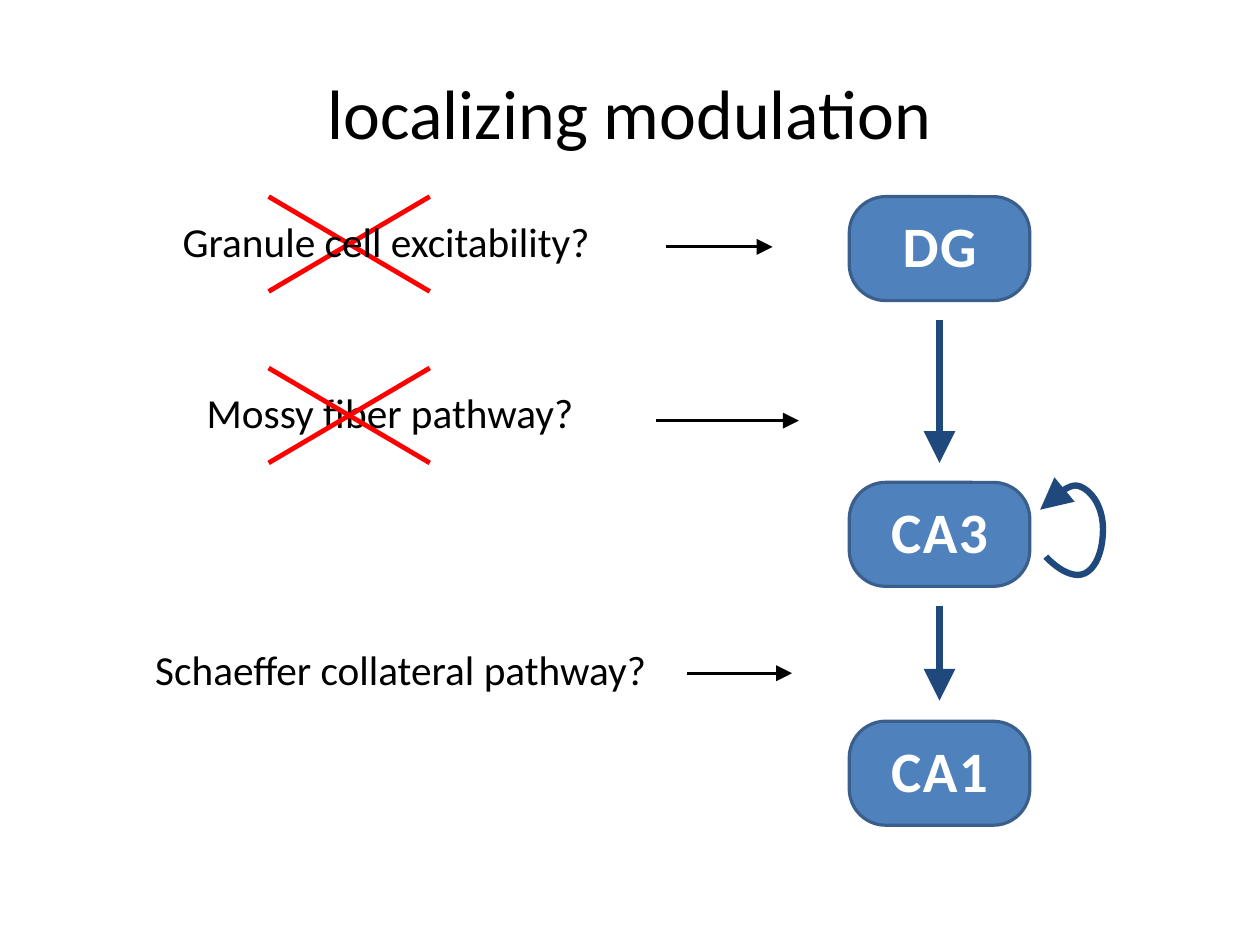
from pptx import Presentation
from pptx import util as u
from pptx.dml.color import RGBColor
from pptx.enum import shapes, text
from lxml import etree

theme = {
    "font": "Calibri",
    "black": RGBColor(0, 0, 0),
    "white": RGBColor(255, 255, 255),
    "red": RGBColor(255, 0, 0),
    "blue": RGBColor(0x4F, 0x81, 0xBD),
    "edge": RGBColor(0x3A, 0x5F, 0x8C),
    "navy": RGBColor(0x1F, 0x49, 0x7D),
    "title": 44, "label": 26, "box": 36,
}
ns = "{http://schemas.openxmlformats.org/drawingml/2006/main}"

deck = Presentation()
deck.slide_width, deck.slide_height = u.Inches(28 / 2.54), u.Inches(21 / 2.54)
slide = deck.slides.add_slide(deck.slide_layouts[5])
items = slide.shapes


def write(shape, words, size, color, align, form, bold=False):
    frame = shape.text_frame
    for key, val in form.items():
        setattr(frame, key, val)
    para = frame.paragraphs[0]
    para.alignment, para.line_spacing = align, 0.93
    run = para.add_run()
    run.text = words
    style = {"name": theme["font"], "size": u.Pt(theme[size]), "bold": bold}
    for key, val in style.items():
        setattr(run.font, key, val)
    run.font.color.rgb = theme[color]
    return run


def stroke(color, width, ends=None, shape=None, head=False):
    if ends:
        shape = items.add_connector(shapes.MSO_CONNECTOR.STRAIGHT, *map(u.Inches, ends))
    shape.line.color.rgb = theme[color]
    shape.line.width = u.Pt(width)
    if head:
        tail = etree.SubElement(shape.line._get_or_add_ln(), ns + "tailEnd")
        for key, val in {"type": "triangle", "w": "lg", "len": "lg"}.items():
            tail.set(key, val)
    if ends:
        etree.SubElement(shape._element.spPr, ns + "effectLst")


flat = {"margin_left": 0, "margin_right": 0, "margin_top": 0, "margin_bottom": 0,
        "vertical_anchor": text.MSO_ANCHOR.MIDDLE, "word_wrap": True}
loose = {"word_wrap": False, "auto_size": text.MSO_AUTO_SIZE.SHAPE_TO_FIT_TEXT}

title = items.title
place = {"left": 0.55, "top": 0.33, "width": 9.92, "height": 1.38}
for key, val in place.items():
    setattr(title, key, u.Inches(val))
write(title, "localizing modulation", "title", "black", text.PP_ALIGN.CENTER, flat)

labels = [
    ("Granule cell excitability?", 1.5, 1.88, 3.87, (5.83, 6.76), 2.16, 1.72),
    ("Mossy fiber pathway?", 1.71, 3.38, 3.47, (5.74, 6.99), 3.68, 3.22),
    ("Schaeffer collateral pathway?", 1.26, 5.63, 4.69, (6.01, 6.93), 5.89, None),
]
for words, left, top, width, (start, end), level, cross in labels:
    label = items.add_textbox(*map(u.Inches, (left, top, width, 0.51)))
    write(label, words, "label", "black", text.PP_ALIGN.LEFT, loose)
    stroke("black", 2, (start, level, end, level), head=True)
    if cross:
        for near, far in [(2.35, 3.76), (3.76, 2.35)]:
            stroke("red", 3, (near, cross, far, cross + 0.83))
            if cross < 2:
                items._spTree.insert(2, items[-1]._element)

for words, top in [("DG", 1.72), ("CA3", 4.22), ("CA1", 6.31)]:
    box = items.add_shape(shapes.MSO_SHAPE.ROUNDED_RECTANGLE,
                          *map(u.Inches, (7.43, top, 1.58, 0.91)))
    box.adjustments[0] = 0.35
    box.shadow.inherit = False
    box.fill.solid()
    box.fill.fore_color.rgb = theme["blue"]
    stroke("edge", 2, shape=box)
    run = write(box, words, "box", "white", text.PP_ALIGN.CENTER, flat, True)
    run.font._element.set("spc", "100")

for top, end in [(2.8, 4.05), (5.3, 6.13)]:
    stroke("navy", 4, (8.22, top, 8.22, end), head=True)

knots = [(9.15, 4.87), (9.15, 4.87), (9.29, 5.03), (9.43, 5.03),
         (9.56, 5.03), (9.65, 4.86), (9.65, 4.63),
         (9.65, 4.4), (9.52, 4.27), (9.43, 4.25),
         (9.33, 4.22), (9.1, 4.46), (9.1, 4.46)]
steps = 12
curve = [tuple(map(u.Inches, knots[0]))]
for first in range(0, len(knots) - 1, 3):
    for step in range(1, steps + 1):
        t = step / steps
        parts = ((1 - t) ** 3, 3 * t * (1 - t) ** 2, 3 * t * t * (1 - t), t ** 3)
        curve.append([u.Inches(sum(w * knot[axis] for w, knot in zip(parts, knots[first:first + 4])))
                      for axis in (0, 1)])
pen = items.build_freeform(*curve[0])
pen.add_line_segments(curve[1:], close=False)
loop = pen.convert_to_shape()
loop.fill.background()
loop.shadow.inherit = False
stroke("navy", 4, shape=loop, head=True)

deck.save("out.pptx")
